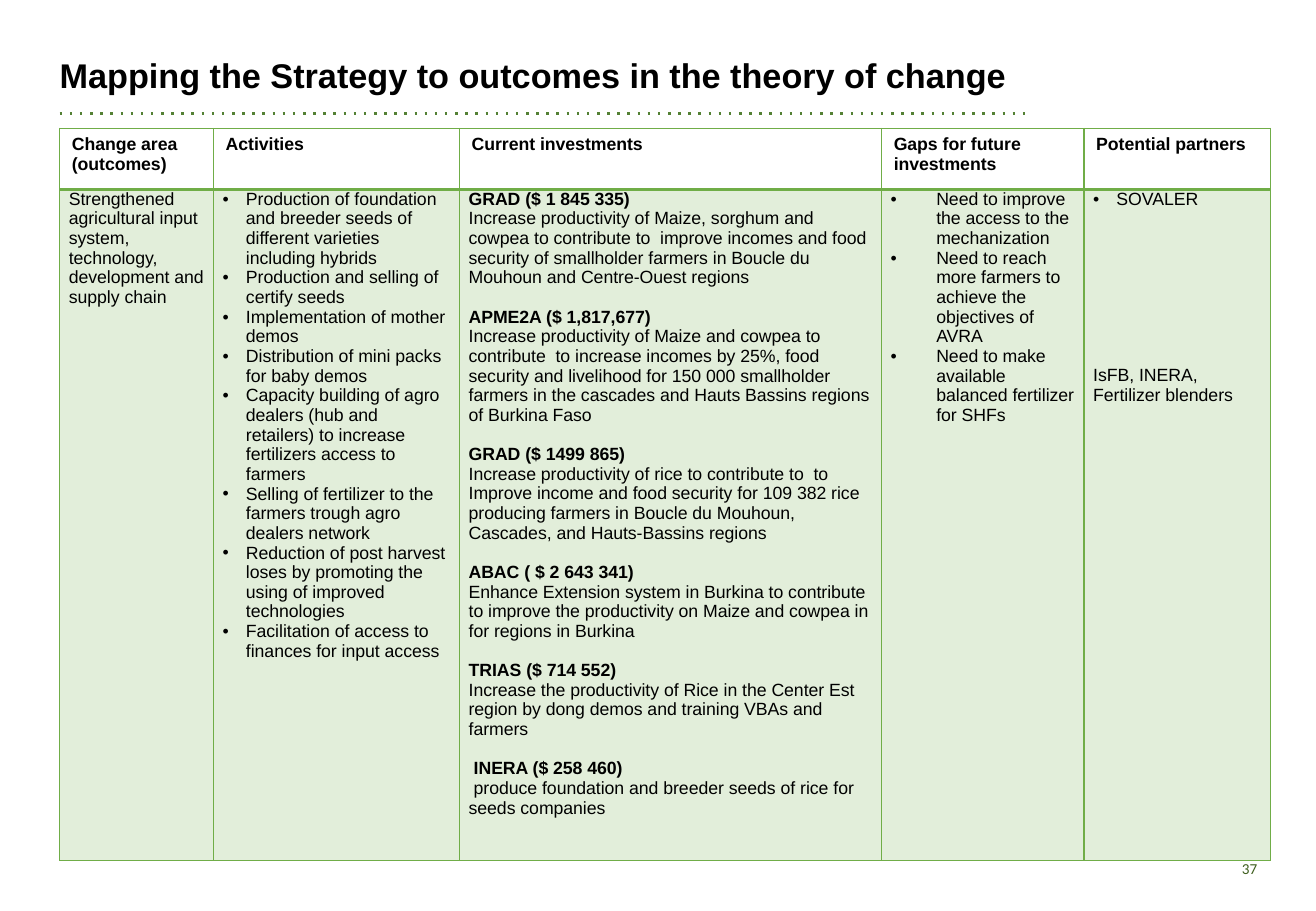
from lxml import etree
from pptx import Presentation
from pptx import util as u
from pptx.dml.color import RGBColor
from pptx.enum import dml, shapes, text
from pptx.oxml.ns import qn

PX = 7620  # 120 px to the inch
BLACK = RGBColor(0x00, 0x00, 0x00)
GREEN = RGBColor(0x70, 0xAD, 0x47)
RULE_GREEN = RGBColor(0x54, 0x81, 0x35)
NUMBER_GREEN = RGBColor(0x3F, 0x5F, 0x1F)
BLANK_LINE = 11.6  # points

COLUMN_WIDTHS = [152, 243, 417, 200, 184]
ROW_HEIGHTS = [60, 621]
HEADINGS = ["Change area (outcomes)", "Activities", "Current investments",
            "Gaps for future investments", "Potential partners"]
OUTCOME = ("Strengthened agricultural input system, technology, "
           "development and supply chain")
ACTIVITIES = [
    "Production of foundation and breeder seeds of different varieties including hybrids",
    "Production and selling of certify seeds",
    "Implementation of mother demos",
    "Distribution of mini packs for baby demos",
    "Capacity building of agro dealers (hub and retailers) to increase "
    "fertilizers access to farmers",
    "Selling of fertilizer to the farmers trough agro dealers network",
    "Reduction of post harvest loses by promoting the using of improved technologies",
    "Facilitation of access to finances for input access",
]
INVESTMENTS = [
    ("GRAD ($ 1 845 335)",
     "Increase productivity of Maize, sorghum and cowpea to contribute to  improve "
     "incomes and food security of smallholder farmers in Boucle du Mouhoun and "
     "Centre-Ouest regions"),
    ("APME2A ($ 1,817,677)",
     "Increase productivity of Maize and cowpea to contribute  to increase incomes by "
     "25%, food security and livelihood for 150 000 smallholder farmers in the cascades "
     "and Hauts Bassins regions of Burkina Faso"),
    ("GRAD ($ 1499 865)",
     "Increase productivity of rice to contribute to  to Improve income and food "
     "security for 109 382 rice producing farmers in Boucle du Mouhoun, Cascades, and "
     "Hauts-Bassins regions"),
    ("ABAC ( $ 2 643 341)",
     "Enhance Extension system in Burkina to contribute to improve the productivity on "
     "Maize and cowpea in for regions in Burkina"),
    ("TRIAS ($ 714 552)",
     "Increase the productivity of Rice in the Center Est region by dong demos and "
     "training VBAs and farmers"),
    ("INERA ($ 258 460)",
     "produce foundation and breeder seeds of rice for seeds companies"),
]
GAPS = [
    "Need to improve the access to the mechanization",
    "Need to reach more farmers to achieve the objectives of AVRA",
    "Need to make available balanced fertilizer for SHFs",
]


def px(length):
    return u.Emu(length * PX)


def write(frame, words, size=10.5, font="Arial", color=BLACK, bold=False,
          align=text.PP_ALIGN.LEFT, before=0, spacing=None, hang=0, first=0):
    """Add a paragraph; hang gives a bullet's indent, first a first-line indent."""
    para = frame.paragraphs[0]
    if para.runs:
        para = frame.add_paragraph()
    para.alignment = align
    if before:
        para.space_before = u.Pt(before)
    if spacing:
        para.line_spacing = spacing
    props = para._p.get_or_add_pPr()
    if hang:
        props.set("marL", str(px(hang)))
        props.set("indent", str(px(-hang)))
        bullet_font = etree.SubElement(props, qn("a:buFont"))
        bullet_font.set("typeface", "Arial")
        etree.SubElement(props, qn("a:buChar")).set("char", "•")
    elif first:
        props.set("indent", str(px(first)))
    run = para.add_run()
    run.text = words
    run.font.size = u.Pt(size)
    run.font.name = font
    run.font.bold = bold
    run.font.color.rgb = color


def text_box(slide, box, anchor, inset):
    frame = slide.shapes.add_textbox(*map(px, box)).text_frame
    frame.word_wrap = True
    frame.vertical_anchor = anchor
    frame.margin_left = frame.margin_right = px(inset)
    frame.margin_top = frame.margin_bottom = px(inset // 2)
    return frame


def add_heading(slide, left, top, width, height):
    """Title with the dotted rule below it."""
    title = text_box(slide, (left, top, width, height), text.MSO_ANCHOR.BOTTOM, 0)
    write(title, "Mapping the Strategy to outcomes in the theory of change",
          size=20.3, bold=True, spacing=0.9)
    rule_y = px(top + height + 17)
    rule = slide.shapes.add_connector(shapes.MSO_CONNECTOR.STRAIGHT, px(left), rule_y,
                                      px(left + width + 10), rule_y)
    rule.line.color.rgb = RULE_GREEN
    rule.line.width = u.Pt(1.5)
    rule.line.dash_style = dml.MSO_LINE.ROUND_DOT
    properties = rule._element.spPr
    properties.find(".//" + qn("a:prstDash")).set("val", "dot")
    etree.SubElement(properties, qn("a:effectLst"))


def set_borders(cell, **widths):
    """Draw green edges; widths are points for L, R, T and B."""
    props = cell._tc.get_or_add_tcPr()
    for side, width in widths.items():
        edge = etree.SubElement(props, qn("a:ln" + side), w=str(u.Pt(width)))
        fill = etree.SubElement(edge, qn("a:solidFill"))
        etree.SubElement(fill, qn("a:srgbClr"), val=str(GREEN))


def add_strategy_table(slide, left, top):
    frame = slide.shapes.add_table(2, len(HEADINGS), px(left), px(top),
                                   px(sum(COLUMN_WIDTHS)), px(sum(ROW_HEIGHTS)))
    table = frame.table
    table.first_row = table.horz_banding = False
    for column, width in zip(table.columns, COLUMN_WIDTHS):
        column.width = px(width)
    for row, height in zip(table.rows, ROW_HEIGHTS):
        row.height = px(height)

    for index, heading in enumerate(HEADINGS):
        header = table.cell(0, index)
        set_borders(header, L=1, R=1, T=1, B=2)
        header.fill.background()
        write(header.text_frame, heading, bold=True)

        body = table.cell(1, index)
        set_borders(body, L=1, R=1, T=2, B=1)
        body.fill.solid()
        body.fill.fore_color.rgb = GREEN
        tint = body._tc.tcPr.find(qn("a:solidFill")).find(qn("a:srgbClr"))
        etree.SubElement(tint, qn("a:alpha"), val="20000")
        body.margin_left = body.margin_right = px(9)
        body.margin_top = body.margin_bottom = 0

    outcome, activities, investments, gaps, partners = (
        table.cell(1, index).text_frame for index in range(len(HEADINGS)))
    write(outcome, OUTCOME)
    for activity in ACTIVITIES:
        write(activities, activity, hang=23)
    for index, (grant, purpose) in enumerate(INVESTMENTS):
        first = 5 if index == len(INVESTMENTS) - 1 else 0
        write(investments, grant, bold=True, first=first,
              before=BLANK_LINE if index else 0)
        write(investments, purpose, first=first)
    for gap in GAPS:
        write(gaps, gap, hang=45)
    write(partners, "SOVALER", hang=23)
    write(partners, "IsFB, INERA, Fertilizer blenders", before=8 * BLANK_LINE)


def add_page_number(slide, left, top, width, height):
    number = text_box(slide, (left, top, width, height), text.MSO_ANCHOR.MIDDLE, 11)
    write(number, "37", size=9, font="Calibri", color=NUMBER_GREEN,
          align=text.PP_ALIGN.RIGHT)


def main():
    deck = Presentation()
    deck.slide_width, deck.slide_height = px(1300), px(900)
    slide = deck.slides.add_slide(deck.slide_layouts[6])
    add_page_number(slide, 949, 834, 304, 48)
    add_heading(slide, 59, 18, 950, 77)
    add_strategy_table(slide, 59, 127)
    deck.save("out.pptx")


if __name__ == "__main__":
    main()
